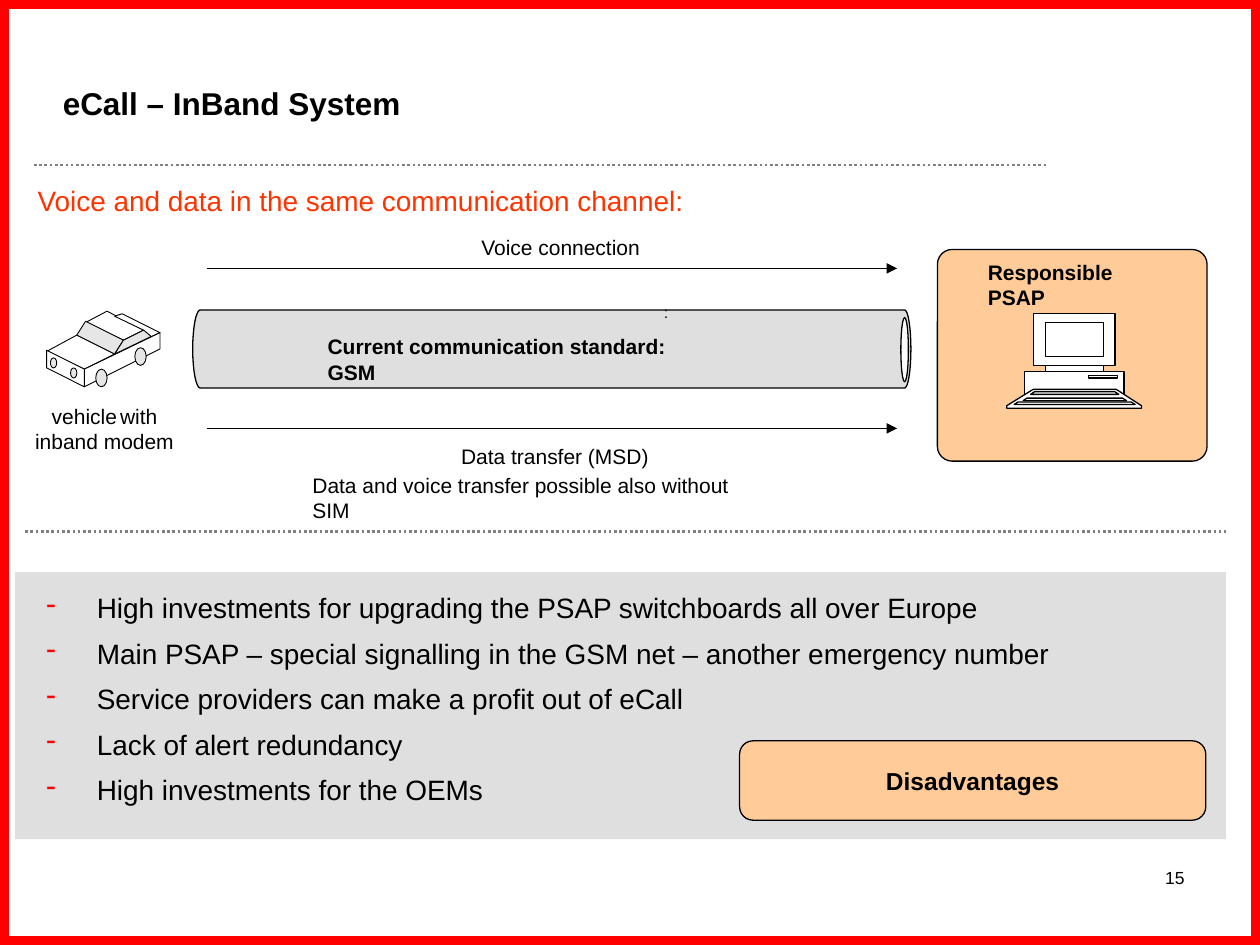
import math

from lxml import etree
from pptx import Presentation
from pptx import util as u
from pptx.dml.color import RGBColor
from pptx.enum import dml, shapes, text
from pptx.oxml.ns import qn

COLORS = {
    "black": "000000", "white": "FFFFFF", "red": "FF0000", "headline": "FF3300",
    "silver": "C0C0C0", "rule": "808080", "peach": "FFCC99", "glass": "E6E6E6",
}
RECT = shapes.MSO_SHAPE.RECTANGLE
OVAL = shapes.MSO_SHAPE.OVAL
ROUNDED = shapes.MSO_SHAPE.ROUNDED_RECTANGLE
CENTER = text.PP_ALIGN.CENTER
RIGHT = text.PP_ALIGN.RIGHT


def rgb(name):
    return RGBColor.from_string(COLORS[name])


class SlideKit:
    """Holds the style and the current slide."""

    font = "Arial"

    def __init__(self, slide):
        self.slide = slide

    def paint(self, shape, fill, line, width, alpha=None):
        shape.shadow.inherit = False
        if fill:
            shape.fill.solid()
            shape.fill.fore_color.rgb = rgb(fill)
            if alpha:
                color = shape.fill._xPr.find(qn("a:solidFill"))[0]
                etree.SubElement(color, qn("a:alpha"), val=str(alpha * 1000))
        else:
            shape.fill.background()
        if line:
            shape.line.color.rgb = rgb(line)
            shape.line.width = u.Pt(width)
        else:
            shape.line.fill.background()
        return shape

    def preset(self, kind, box, fill=None, line="black", width=0.5, alpha=None, corner=None):
        shape = self.slide.shapes.add_shape(kind, *map(u.Inches, box))
        if corner is not None:
            shape.adjustments[0] = corner
        return self.paint(shape, fill, line, width, alpha)

    def polygon(self, points, fill="white", width=0.5, alpha=None):
        start, *rest = [(u.Inches(x), u.Inches(y)) for x, y in points]
        builder = self.slide.shapes.build_freeform(*start, scale=1.0)
        builder.add_line_segments(rest, close=True)
        return self.paint(builder.convert_to_shape(), fill, "black", width, alpha)

    def run(self, paragraph, words, size, color="black", bold=False):
        run = paragraph.add_run()
        run.text = words
        run.font.name = self.font
        run.font.size = u.Pt(size)
        run.font.bold = bold
        run.font.color.rgb = rgb(color)

    def frame(self, box, wrap=True, inset=True):
        frame = self.slide.shapes.add_textbox(*map(u.Inches, box)).text_frame
        frame.word_wrap = wrap
        if not inset:
            frame.margin_left = frame.margin_right = 0
            frame.margin_top = frame.margin_bottom = 0
        return frame

    def label(self, box, runs, color="black", bold=False, wrap=False, inset=False, align=None):
        paragraph = self.frame(box, wrap, inset).paragraphs[0]
        paragraph.alignment = align
        for words, size in runs:
            self.run(paragraph, words, size, color, bold)

    def bullets(self, box, items, size, indent, gap):
        frame = self.frame(box)
        for i, item in enumerate(items):
            paragraph = frame.paragraphs[0] if i == 0 else frame.add_paragraph()
            props = paragraph._p.get_or_add_pPr()
            props.set("marL", str(u.Inches(indent)))
            props.set("indent", str(-u.Inches(indent)))
            bullet_color = etree.SubElement(props, qn("a:buClr"))
            etree.SubElement(bullet_color, qn("a:srgbClr"), val=COLORS["red"])
            etree.SubElement(props, qn("a:buChar"), char="-")
            if i:
                paragraph.space_before = u.Pt(gap)
            self.run(paragraph, item, size)

    def line(self, x1, x2, y, color="black", width=0.5, dotted=False, arrow=False):
        line = self.slide.shapes.add_connector(
            shapes.MSO_CONNECTOR.STRAIGHT, *map(u.Inches, (x1, y, x2, y)))
        line.line.color.rgb = rgb(color)
        line.line.width = u.Pt(width)
        if dotted:
            line.line.dash_style = dml.MSO_LINE.ROUND_DOT
        if arrow:
            etree.SubElement(line.line._get_or_add_ln(), qn("a:tailEnd"), type="triangle")
        etree.SubElement(line._element.spPr, qn("a:effectLst"))


def half_ellipse(cx, cy, rx, ry, start, steps=16):
    angles = [math.radians(start + 180 * i / steps) for i in range(steps + 1)]
    return [(cx + rx * math.cos(a), cy + ry * math.sin(a)) for a in angles]


def draw_car(kit):
    hood = [(0.37, 2.79), (0.67, 2.93), (0.91, 2.81), (0.61, 2.66)]
    roof = [(0.68, 2.56), (0.98, 2.7), (1.14, 2.62), (0.85, 2.47)]
    trunk = [(1.27, 2.64), (0.97, 2.49), (0.91, 2.51), (1.14, 2.62), (1.14, 2.7)]
    side = [(0.67, 3.07), (1.27, 2.77), (1.27, 2.64), (0.67, 2.93)]
    front = [(0.37, 2.78), (0.37, 2.92), (0.67, 3.07), (0.67, 2.93)]
    windscreen = [(0.61, 2.66), (0.68, 2.55), (0.98, 2.7), (0.91, 2.81)]
    side_window = [(0.98, 2.7), (1.14, 2.62), (1.2, 2.67), (0.91, 2.81)]
    for panel in (hood, roof, trunk, side, front):
        kit.polygon(panel)
    for window in (windscreen, side_window):
        kit.polygon(window, "glass")
    for x, y in ((0.76, 2.93), (1.07, 2.76)):  # wheels
        kit.preset(OVAL, (x, y, 0.09, 0.14), "glass")
    for x, y in ((0.4, 2.84), (0.56, 2.92)):  # headlights
        kit.preset(OVAL, (x, y, 0.05, 0.08), "glass")


def draw_computer(kit):
    monitor, screen = (8.2, 2.49, 0.65, 0.41), (8.3, 2.56, 0.46, 0.27)
    neck, base = (8.3, 2.9, 0.46, 0.05), (8.13, 2.95, 0.79, 0.19)
    drive = (8.64, 2.98, 0.23, 0.02)
    for part in (monitor, screen, neck, base, drive):
        kit.preset(RECT, part, "white", width=0.75)
    kit.polygon([(8.2, 3.09), (8.86, 3.09), (9.06, 3.22), (9.06, 3.24),
                 (7.99, 3.24), (7.99, 3.22)], width=0.75)
    for left, right, top in ((8.21, 8.85, 3.11), (8.15, 8.91, 3.16), (8.08, 8.98, 3.19)):
        bottom = top + 0.02  # key rows widen towards the front
        kit.polygon([(left, top), (right, top), (right + 0.03, bottom),
                     (left - 0.03, bottom)], width=0.75)


def main():
    prs = Presentation()
    prs.slide_width, prs.slide_height = u.Inches(10), u.Inches(7.5)
    kit = SlideKit(prs.slides.add_slide(prs.slide_layouts[6]))

    # Frame, page number and title
    kit.preset(RECT, (0, 0, 10, 7.5), line="red", width=10)
    kit.label((7.17, 6.83, 2.33, 0.52), [("15", 10)], wrap=True, inset=True, align=RIGHT)
    kit.label((0.4, 0.62, 6.33, 0.4), [("eCall – InBand System", 18)],
              bold=True, wrap=True, inset=True)
    kit.label((0.2, 1.41, 5.35, 0.37),
              [("Voice and data in the same communication channel:", 16)],
              color="headline", inset=True)
    kit.line(0.27, 8.31, 1.31, "rule", 1.5, dotted=True)
    kit.line(0.2, 9.73, 4.22, "rule", 1.5, dotted=True)

    # Communication channel
    tube = half_ellipse(7.18, 2.77, 0.05, 0.31, -90) + half_ellipse(1.59, 2.77, 0.06, 0.31, 90)
    kit.polygon(tube, "silver", 0, alpha=50)
    kit.preset(OVAL, (7.15, 2.52, 0.06, 0.51), "white", width=0)
    kit.label((2.6, 2.65, 3.11, 0.2), [("Current communication standard: GSM", 12)], bold=True)
    kit.label((5.27, 2.4, 0.07, 0.15), [(":", 9)])
    for y in (2.13, 3.4):
        kit.line(1.64, 7.12, y, arrow=True)
    kit.label((3.82, 1.86, 1.26, 0.2), [("Voice connection", 12)])
    kit.label((3.66, 3.52, 1.54, 0.2), [("Data transfer (MSD)", 12)])
    kit.label((2.48, 3.75, 3.5, 0.4),
              [("Data and voice transfer possible also without SIM", 12)], wrap=True)

    # Vehicle
    draw_car(kit)
    kit.label((0.2, 3.2, 1.26, 0.4), [("vehicle", 12), (" ", 6), ("with inband modem", 12)],
              wrap=True, align=CENTER)

    # Responsible PSAP
    kit.preset(ROUNDED, (7.44, 1.98, 2.14, 1.68), "peach", width=0, corner=0.07)
    kit.label((7.84, 2.06, 1.49, 0.2), [("Responsible PSAP", 12)], bold=True)
    draw_computer(kit)

    # Disadvantages
    kit.preset(RECT, (0.12, 4.54, 9.61, 2.12), "silver", line=None, alpha=50)
    kit.bullets((0.27, 4.64, 9.21, 1.75), [
        "High investments for upgrading the PSAP switchboards all over Europe",
        "Main PSAP – special signalling in the GSM net – another emergency number",
        "Service providers can make a profit out of eCall",
        "Lack of alert redundancy",
        "High investments for the OEMs",
    ], size=16, indent=0.4, gap=6.8)
    badge = kit.preset(ROUNDED, (5.87, 5.88, 3.7, 0.63), "peach", width=0.75, corner=0.17)
    badge.text_frame.vertical_anchor = text.MSO_ANCHOR.MIDDLE
    caption = badge.text_frame.paragraphs[0]
    caption.alignment = CENTER
    kit.run(caption, "Disadvantages", 14, bold=True)

    prs.save("out.pptx")


if __name__ == "__main__":
    main()
